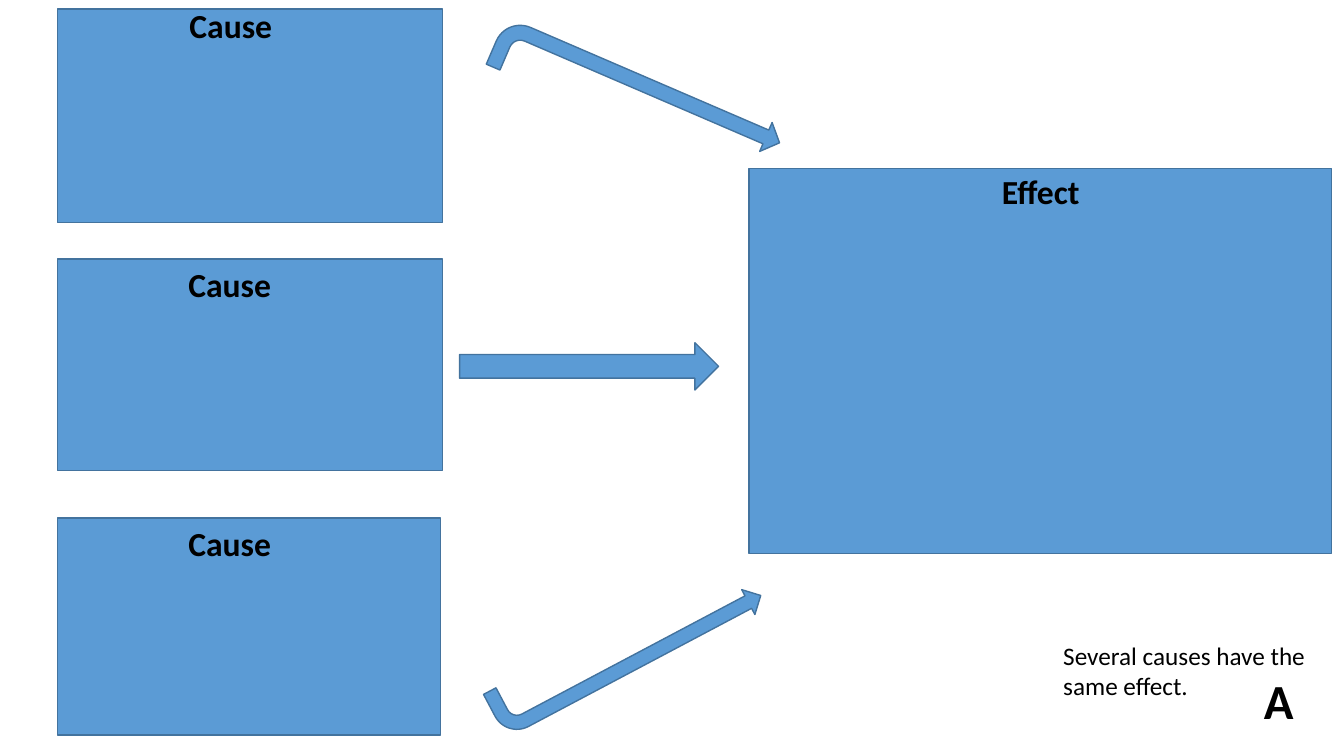
from dataclasses import dataclass

from pptx import Presentation
from pptx.dml.color import RGBColor
from pptx.enum.shapes import MSO_SHAPE as Shape
from pptx.enum.text import MSO_AUTO_SIZE as AutoSize
from pptx.oxml.ns import qn
from pptx.util import Pt


@dataclass(frozen=True)
class Theme:
    fill: RGBColor = RGBColor(0x5B, 0x9B, 0xD5)
    line: RGBColor = RGBColor(0x43, 0x73, 0x9E)
    text: RGBColor = RGBColor(0, 0, 0)
    font: str = "Calibri"
    note: int = 18
    heading: int = 24
    letter: int = 35


THEME = Theme()

# top, width, height of the box, then left and top of its heading
CAUSES = [
    (6.5, 275, 152.6, 128.2, 0),
    (185, 275, 151.2, 127.4, 185),
    (370.1, 273.6, 154.8, 127.4, 370.1),
]


def add_block(slide, kind, left, top, width, height):
    s = slide.shapes.add_shape(kind, Pt(left), Pt(top), Pt(width), Pt(height))
    s.shadow.inherit = False
    s.fill.solid()
    s.fill.fore_color.rgb = THEME.fill
    s.line.color.rgb = THEME.line
    s.line.width = Pt(1)
    return s


def add_bent_arrow(slide, left, top, width, height, angle, flip=False, head=0.25):
    """Add a bent arrow; head is half the arrowhead's width as a share of the height."""
    s = add_block(slide, Shape.BENT_ARROW, left, top, width, height)
    s.adjustments[1] = head
    s.rotation = angle
    if flip:
        s.element.spPr.find(qn("a:xfrm")).set("flipV", "1")


def add_text(slide, text, left, top, width, height, size, bold=False):
    s = slide.shapes.add_textbox(Pt(left), Pt(top), Pt(width), Pt(height))
    tf = s.text_frame
    tf.word_wrap = True
    tf.auto_size = AutoSize.SHAPE_TO_FIT_TEXT
    r = tf.paragraphs[0].add_run()
    r.text = text
    r.font.name = THEME.font
    r.font.size = Pt(size)
    r.font.bold = bold
    r.font.color.rgb = THEME.text


def add_heading(slide, text, left, top):
    add_text(slide, text, left, top, 101.5, 36, THEME.heading, bold=True)


def main():
    prs = Presentation()
    prs.slide_width, prs.slide_height = Pt(960), Pt(540)
    slide = prs.slides.add_slide(prs.slide_layouts[6])

    for top, width, height, text_left, text_top in CAUSES:
        add_block(slide, Shape.RECTANGLE, 41, top, width, height)
        add_heading(slide, "Cause", text_left, text_top)

    add_block(slide, Shape.RECTANGLE, 535, 120.2, 416.2, 275)
    add_heading(slide, "Effect", 708.5, 118.8)

    add_bent_arrow(slide, 342.7, 445, 208.1, 40.3, 332.1, flip=True)
    add_bent_arrow(slide, 347, 47.5, 214.6, 42.5, 23.3, head=0.265)
    add_block(slide, Shape.RIGHT_ARROW, 328.3, 244.8, 185, 33.8)

    add_text(slide, "A", 895.7, 475.2, 78.5, 49.7, THEME.letter, bold=True)
    add_text(slide, "Several causes have the same effect.",
             752.4, 453.6, 198.7, 51.1, THEME.note)

    prs.save("out.pptx")


if __name__ == "__main__":
    main()
